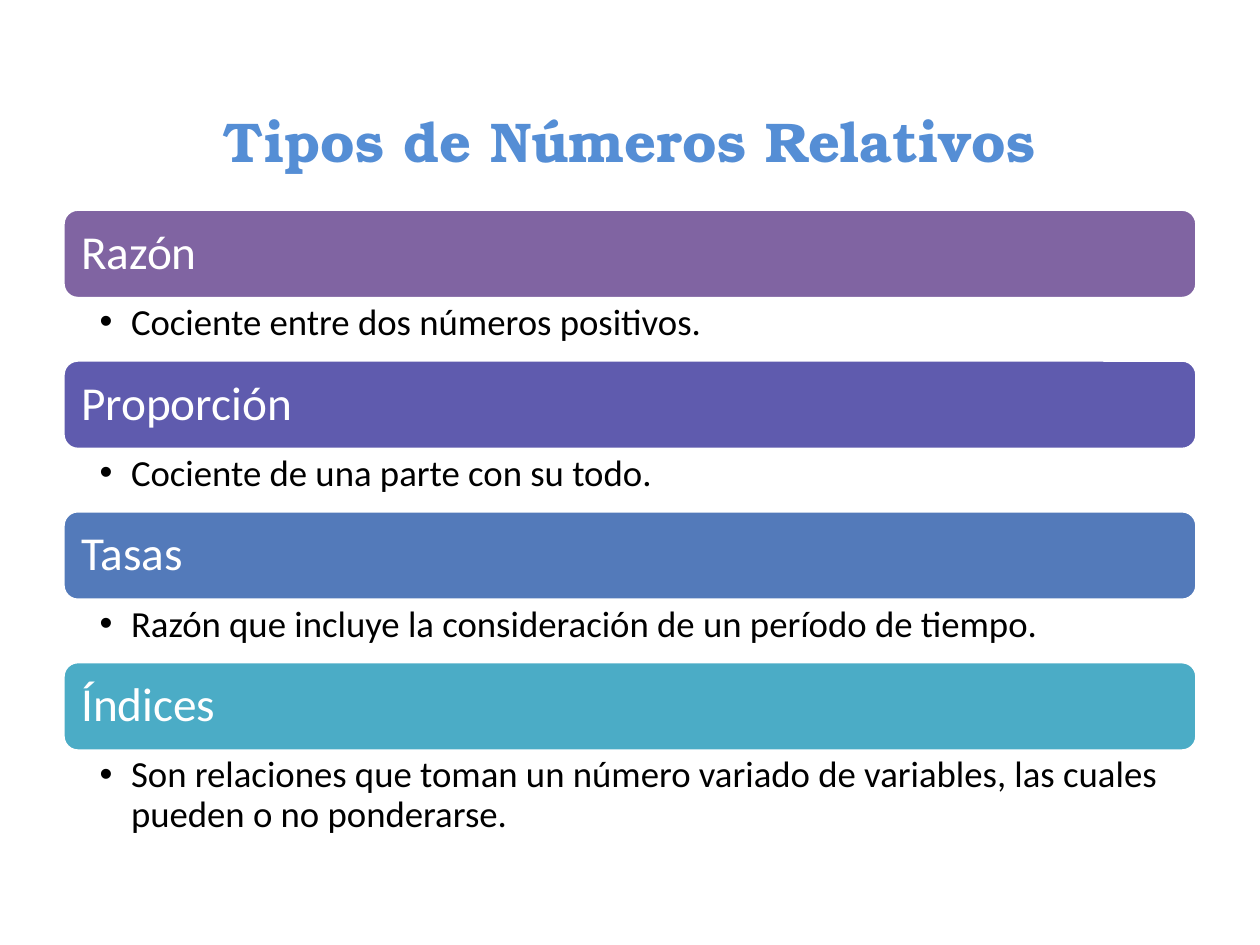
from lxml.etree import SubElement
from pptx import Presentation
from pptx.dml.color import RGBColor
from pptx.enum.shapes import MSO_SHAPE
from pptx.enum.text import MSO_ANCHOR, PP_ALIGN
from pptx.oxml.ns import qn
from pptx.util import Inches, Pt

WIDTH, HEIGHT = Inches(10), Inches(7.5)
LEFT, SPAN = int(WIDTH * 0.05), int(WIDTH * 0.9)
TOP, PITCH, BAR = Inches(1.66), Inches(1.197), Inches(0.71)

WHITE = RGBColor(0xFF, 0xFF, 0xFF)
BLACK = RGBColor(0x00, 0x00, 0x00)
BLUE = RGBColor(0x55, 0x8E, 0xD5)
PURPLE = RGBColor(0x80, 0x64, 0xA2)
INDIGO = RGBColor(0x5F, 0x5B, 0xAE)
STEEL = RGBColor(0x53, 0x7A, 0xBA)
TEAL = RGBColor(0x4B, 0xAC, 0xC6)

TYPES = [
    ("Razón", "Cociente entre dos números positivos.", PURPLE, 0.49),
    ("Proporción", "Cociente de una parte con su todo.", INDIGO, 0.49),
    ("Tasas", "Razón que incluye la consideración de un período de tiempo.", STEEL, 0.49),
    ("Índices", "Son relaciones que toman un número variado de variables, "
     "las cuales pueden o no ponderarse.", TEAL, 0.72),
]


def write(shape, text, size, color, insets, font="Calibri", anchor=MSO_ANCHOR.MIDDLE):
    """Set one styled paragraph in a shape and return it."""
    frame = shape.text_frame
    frame.text = text
    frame.word_wrap = True
    frame.vertical_anchor = anchor
    (frame.margin_left, frame.margin_top,
     frame.margin_right, frame.margin_bottom) = map(Inches, insets)
    para = frame.paragraphs[0]
    para.alignment = PP_ALIGN.LEFT
    style = para.runs[0].font
    style.name, style.size = font, Pt(size)
    style.color.rgb = color
    return para


def add_title(slide, text):
    """Add the centred bold title."""
    box = slide.shapes.add_textbox(LEFT, Inches(0.68), SPAN, Inches(0.87))
    para = write(box, text, 32, BLUE, (0.1, 0.05, 0.1, 0.05), "TeX Gyre Bonum")
    para.alignment = PP_ALIGN.CENTER
    para.runs[0].font.bold = True


def add_bar(slide, text, top, color):
    """Add a rounded heading bar."""
    bar = slide.shapes.add_shape(MSO_SHAPE.ROUNDED_RECTANGLE, LEFT, top, SPAN, BAR)
    bar.shadow.inherit = False
    bar.fill.solid()
    bar.fill.fore_color.rgb = color
    bar.line.color.rgb = WHITE
    bar.line.width = Pt(2)
    write(bar, text, 27, WHITE, (0.11,) * 4).line_spacing = 0.9


def add_note(slide, text, top, height):
    """Add a bulleted definition."""
    box = slide.shapes.add_textbox(LEFT, top, SPAN, height)
    para = write(box, text, 21, BLACK, (0.29, 0.04, 0.21, 0.04), anchor=MSO_ANCHOR.TOP)
    para.level = 1
    para.line_spacing = 0.9
    props = para._p.get_or_add_pPr()
    props.set("marL", str(Inches(0.25)))
    props.set("indent", str(-Inches(0.25)))
    SubElement(props, qn("a:buFont"), typeface="Arial")
    SubElement(props, qn("a:buChar"), char="•")


def main():
    """Build and save the slide."""
    deck = Presentation()
    deck.slide_width, deck.slide_height = WIDTH, HEIGHT
    slide = deck.slides.add_slide(deck.slide_layouts[6])
    add_title(slide, "Tipos de Números Relativos")
    for row, (name, note, color, height) in enumerate(TYPES):
        top = TOP + row * PITCH
        add_bar(slide, name, top, color)
        add_note(slide, note, top + BAR, Inches(height))
    deck.save("out.pptx")


if __name__ == "__main__":
    main()
